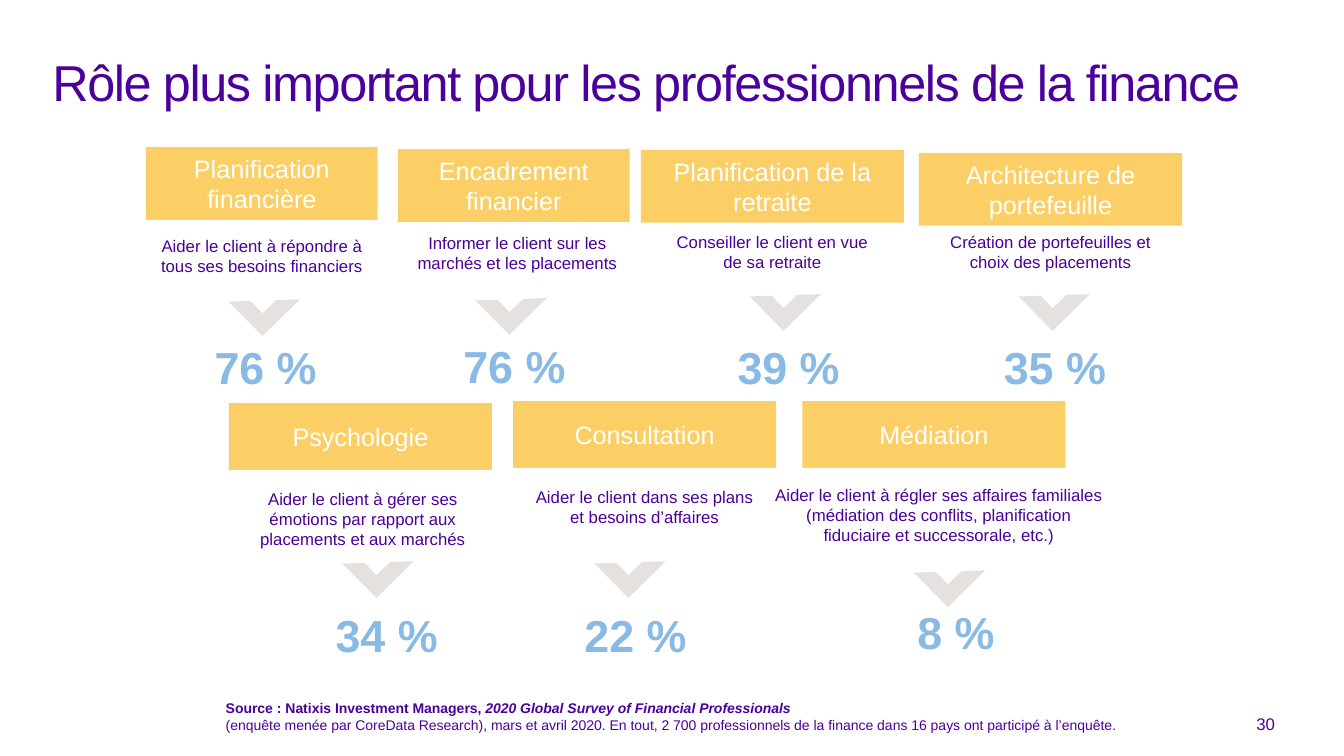
from dataclasses import dataclass

from pptx import Presentation
from pptx.dml.color import RGBColor
from pptx.enum.shapes import MSO_SHAPE
from pptx.enum.text import MSO_ANCHOR, PP_ALIGN
from pptx.shapes.autoshape import Shape
from pptx.slide import Slide
from pptx.text.text import Font
from pptx.util import Cm, Pt

PURPLE = "4B009B"
TITLE_PURPLE = "4B009C"
YELLOW = "FBCF65"
BLUE = "88BAE5"
GREY = "E4E1DE"
WHITE = "FFFFFF"


@dataclass(frozen=True)
class Box:
    left: float
    top: float
    width: float
    height: float

    def lengths(self) -> tuple[Cm, Cm, Cm, Cm]:
        return Cm(self.left), Cm(self.top), Cm(self.width), Cm(self.height)


@dataclass(frozen=True)
class Role:
    heading: str
    heading_box: Box
    duty: str
    duty_box: Box
    chevron: tuple[float, float]
    share: str
    share_corner: tuple[float, float]


ROLES = [
    Role("Planification financière", Box(3.68, 3.71, 5.84, 1.83),
         "Aider le client à répondre à tous ses besoins financiers", Box(3.68, 5.82, 5.84, 1.27),
         (6.05, 6.91), "76 %", (5.08, 8.43)),
    Role("Encadrement financier", Box(10.03, 3.76, 5.84, 1.83),
         "Informer le client sur les marchés et les placements", Box(10.03, 5.74, 6.02, 1.27),
         (12.27, 6.88), "76 %", (11.35, 8.41)),
    Role("Planification de la retraite", Box(16.15, 3.78, 6.63, 1.83),
         "Conseiller le client en vue\nde sa retraite", Box(16.15, 5.72, 6.63, 1.27),
         (19.18, 6.78), "39 %", (18.26, 8.43)),
    Role("Architecture de portefeuille", Box(23.16, 3.86, 6.63, 1.83),
         "Création de portefeuilles et choix des placements", Box(23.16, 5.72, 6.63, 1.27),
         (25.96, 6.78), "35 %", (24.97, 8.43)),
    Role("Psychologie", Box(5.77, 10.16, 6.63, 1.68),
         "Aider le client à gérer ses émotions par rapport aux placements et aux marchés",
         Box(5.82, 12.19, 6.65, 1.8),
         (8.92, 13.51), "34 %", (8.13, 15.19)),
    Role("Consultation", Box(12.93, 10.11, 6.63, 1.68),
         "Aider le client dans ses plans et besoins d’affaires", Box(13.21, 12.14, 6.07, 1.27),
         (15.27, 13.51), "22 %", (14.4, 15.19)),
    Role("Médiation", Box(20.22, 10.11, 6.63, 1.68),
         "Aider le client à régler ses affaires familiales (médiation des conflits, "
         "planification fiduciaire et successorale, etc.)",
         Box(19.28, 12.09, 8.76, 1.8),
         (23.32, 13.74), "8 %", (22.48, 15.11)),
]


def rgb(color: str) -> RGBColor:
    return RGBColor.from_string(color)


def style_font(font: Font, size: float, color: str, bold: bool = False) -> None:
    font.name = "Arial"
    font.size = Pt(size)
    font.bold = bold
    font.color.rgb = rgb(color)


def add_flat_shape(slide: Slide, kind: MSO_SHAPE, box: Box, color: str) -> Shape:
    shape = slide.shapes.add_shape(kind, *box.lengths())
    shape.shadow.inherit = False
    shape.fill.solid()
    shape.fill.fore_color.rgb = rgb(color)
    shape.line.fill.background()
    return shape


def write(shape: Shape, text: str, size: float, color: str,
          align: PP_ALIGN = PP_ALIGN.CENTER, anchor: MSO_ANCHOR = MSO_ANCHOR.TOP,
          bold: bool = False) -> None:
    frame = shape.text_frame
    frame.word_wrap = True
    frame.vertical_anchor = anchor
    paragraph = frame.paragraphs[0]
    paragraph.text = text
    paragraph.alignment = align
    style_font(paragraph.font, size, color, bold)


def add_text(slide: Slide, box: Box) -> Shape:
    return slide.shapes.add_textbox(*box.lengths())


def add_role(slide: Slide, role: Role) -> None:
    heading = add_flat_shape(slide, MSO_SHAPE.RECTANGLE, role.heading_box, YELLOW)
    write(heading, role.heading, 18, WHITE, anchor=MSO_ANCHOR.MIDDLE)
    write(add_text(slide, role.duty_box), role.duty, 12, PURPLE)
    chevron = add_flat_shape(slide, MSO_SHAPE.HALF_FRAME, Box(*role.chevron, 1.22, 1.32), GREY)
    chevron.rotation = 225.4
    write(add_text(slide, Box(*role.share_corner, 3.23, 1.63)), role.share, 32, BLUE, bold=True)


def add_title(slide: Slide) -> None:
    title = add_text(slide, Box(1.07, 0.3, 31.83, 2.64))
    write(title, "Rôle plus important pour les professionnels de la finance", 36, TITLE_PURPLE,
          PP_ALIGN.LEFT, MSO_ANCHOR.BOTTOM)
    title.text_frame.paragraphs[0].runs[0]._r.get_or_add_rPr().set("spc", "-100")


def add_source(slide: Slide) -> None:
    source = add_text(slide, Box(5.44, 17.5, 30.48, 1.12))
    write(source, "", 10, PURPLE, PP_ALIGN.LEFT)
    paragraph = source.text_frame.paragraphs[0]
    publisher = paragraph.add_run()
    publisher.text = "Source : Natixis Investment Managers, "
    publisher.font.bold = True
    survey = paragraph.add_run()
    survey.text = "2020 Global Survey of Financial Professionals"
    survey.font.bold = True
    survey.font.italic = True
    paragraph.add_line_break()
    method = paragraph.add_run()
    method.text = ("(enquête menée par CoreData Research), mars et avril 2020. En tout, "
                   "2 700 professionnels de la finance dans 16 pays ont participé à l’enquête.")


def add_page_number(slide: Slide) -> None:
    page_number = add_text(slide, Box(29.79, 17.96, 2.59, 0.64))
    write(page_number, "30", 12, PURPLE, PP_ALIGN.RIGHT, MSO_ANCHOR.MIDDLE)
    frame = page_number.text_frame
    frame.margin_left = frame.margin_top = frame.margin_bottom = Cm(0)
    frame.paragraphs[0].line_spacing = 0.9


def main() -> None:
    presentation = Presentation()
    presentation.slide_width = Cm(33.87)
    presentation.slide_height = Cm(19.05)
    slide = presentation.slides.add_slide(presentation.slide_layouts[6])
    add_title(slide)
    for role in ROLES:
        add_role(slide, role)
    add_source(slide)
    add_page_number(slide)
    presentation.save("out.pptx")


if __name__ == "__main__":
    main()
